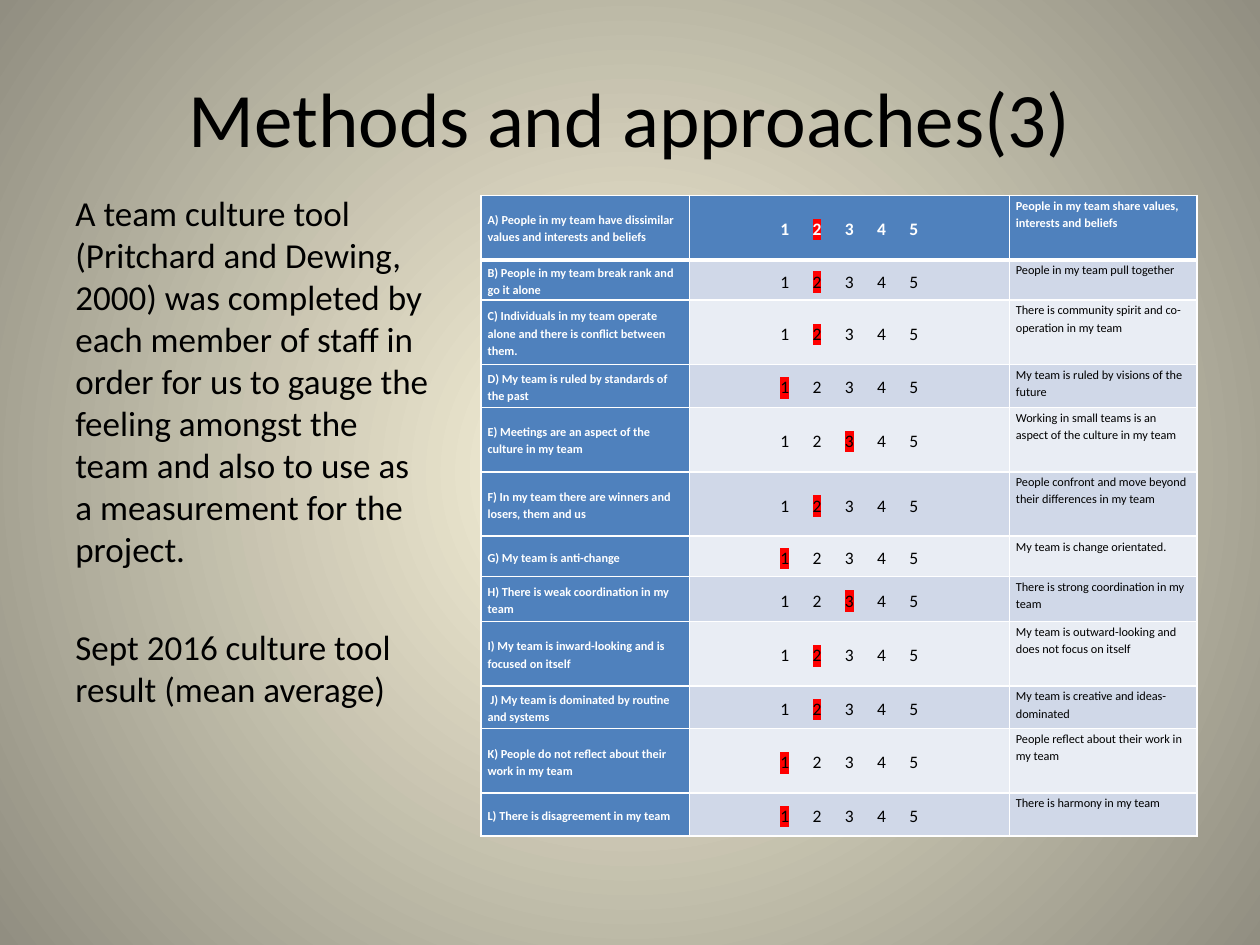
from lxml.etree import SubElement
from pptx import Presentation
from pptx.dml.color import RGBColor
from pptx.enum.text import MSO_ANCHOR as Anchor, PP_ALIGN as Align
from pptx.oxml import parse_xml
from pptx.oxml.ns import nsdecls, qn
from pptx.util import Cm, Pt

FONT = "Calibri"
BLACK = RGBColor(0x00, 0x00, 0x00)
WHITE = RGBColor(0xFF, 0xFF, 0xFF)
RED = RGBColor(0xFF, 0x00, 0x00)
BLUE = RGBColor(0x4F, 0x81, 0xBD)
BAND_DARK = RGBColor(0xD0, 0xD8, 0xE8)
BAND_LIGHT = RGBColor(0xE9, 0xED, 0xF4)
GLOW_CENTRE = RGBColor(0xFC, 0xF7, 0xDD)
GLOW_EDGE = RGBColor(0x91, 0x8E, 0x81)

TITLE = "Methods and approaches(3)"
BODY = [
    "A team culture tool (Pritchard and Dewing, 2000) was completed by each member of staff "
    "in order for us to gauge the feeling amongst the team and also to use as a measurement "
    "for the project.",
    "Sept 2016 culture tool result (mean average)",
]

COLUMN_WIDTHS = [4.2, 6.45, 3.78]
SCORE_INDENT = Cm(1.83)
SCORE_STEP = Cm(0.65)
# negative statement, mean score, positive statement, row height in cm
STATEMENTS = [
    ("A) People in my team have dissimilar values and interests and beliefs", 2,
     "People in my team share values, interests and beliefs", 1.3),
    ("B) People in my team break rank and go it alone", 2,
     "People in my team pull together", 0.81),
    ("C) Individuals in my team operate alone and there is conflict between them.", 2,
     "There is community spirit and co-operation in my team", 1.3),
    ("D) My team is ruled by standards of the past", 1,
     "My team is ruled by visions of the future", 0.86),
    ("E) Meetings are an aspect of the culture in my team", 3,
     "Working in small teams is an aspect of the culture in my team", 1.3),
    ("F) In my team there are winners and losers, them and us", 2,
     "People confront and move beyond their differences in my team", 1.3),
    ("G) My team is anti-change", 1,
     "My team is change orientated.", 0.81),
    ("H) There is weak coordination in my team", 3,
     "There is strong coordination in my team", 0.91),
    ("I) My team is inward-looking and is focused on itself", 2,
     "My team is outward-looking and does not focus on itself", 1.3),
    (" J) My team is dominated by routine and systems", 2,
     "My team is creative and ideas-dominated", 0.86),
    ("K) People do not reflect about their work in my team", 1,
     "People reflect about their work in my team", 1.3),
    ("L) There is disagreement in my team", 1,
     "There is harmony in my team", 0.86),
]


def paint_background(page):
    """Fill the page with a gradient that spreads from its centre."""
    fill = page.background.fill
    fill.gradient()
    for stop, color, position in zip(fill.gradient_stops, (GLOW_CENTRE, GLOW_EDGE), (0, 1)):
        stop.color.rgb = color
        stop.position = position
    linear = next(page.element.iter(qn("a:lin")))
    linear.getparent().replace(linear, parse_xml(
        f'<a:path {nsdecls("a")} path="circle">'
        '<a:fillToRect l="50000" t="50000" r="50000" b="50000"/></a:path>'))


def style_span(span, size, color=BLACK, bold=False):
    font = span.font
    font.name, font.size, font.bold = FONT, Pt(size), bold
    font.color.rgb = color


def highlight(span, color):
    mark = parse_xml(f'<a:highlight {nsdecls("a")}><a:srgbClr val="{color}"/></a:highlight>')
    span.font._element.find(qn("a:solidFill")).addnext(mark)


def add_text(page, paragraphs, left, top, width, height, size,
             align=Align.LEFT, anchor=Anchor.TOP, gap=0):
    frame = page.shapes.add_textbox(Cm(left), Cm(top), Cm(width), Cm(height)).text_frame
    frame.word_wrap = True
    frame.vertical_anchor = anchor
    frame.text = "\n".join(paragraphs)
    for index, para in enumerate(frame.paragraphs):
        para.alignment = align
        para.space_before = Pt(gap if index else 0)
        style_span(para.runs[0], size)


def set_borders(cell, top, bottom):
    """Draw white borders of 1 pt at the sides and of the given widths above and below."""
    properties = cell._tc.get_or_add_tcPr()
    for index, (side, width) in enumerate(zip("LRTB", (1, 1, top, bottom))):
        properties.insert(index, parse_xml(
            f'<a:ln{side} {nsdecls("a")} w="{Pt(width)}">'
            f'<a:solidFill><a:srgbClr val="{WHITE}"/></a:solidFill></a:ln{side}>'))


def prepare_cell(cell, fill, anchor):
    cell.fill.solid()
    cell.fill.fore_color.rgb = fill
    cell.vertical_anchor = anchor
    cell.margin_left = cell.margin_right = Cm(0.13)
    cell.margin_top, cell.margin_bottom = Cm(0.02), 0
    para = cell.text_frame.paragraphs[0]
    para.line_spacing = 1.15
    return para


def fill_statement(cell, text, fill, color, bold, anchor):
    para = prepare_cell(cell, fill, anchor)
    para.text = text
    style_span(para.runs[0], 7, color, bold)


def fill_scores(cell, score, fill, color, bold):
    """Write the scale from 1 to 5 on tab stops and mark the score."""
    para = prepare_cell(cell, fill, Anchor.MIDDLE)
    cell.margin_left = SCORE_INDENT
    stops = SubElement(para._p.get_or_add_pPr(), qn("a:tabLst"))
    for step in range(1, 5):
        SubElement(stops, qn("a:tab"), pos=str(SCORE_STEP * step), algn="l")
    before = "".join(f"{number}\t" for number in range(1, score))
    after = "".join(f"\t{number}" for number in range(score + 1, 6))
    for text in filter(None, (before, str(score), after)):
        span = para.add_run()
        span.text = text
        style_span(span, 10, color, bold)
        if text == str(score):
            highlight(span, RED)


def add_culture_table(page):
    table = page.shapes.add_table(len(STATEMENTS), len(COLUMN_WIDTHS), Cm(9.7), Cm(3.94),
                                  Cm(sum(COLUMN_WIDTHS)), Cm(12.97)).table
    for column, width in zip(table.columns, COLUMN_WIDTHS):
        column.width = Cm(width)
    for index, (negative, score, positive, height) in enumerate(STATEMENTS):
        is_header = index == 0
        row = table.rows[index]
        row.height = Cm(height)
        fill = BLUE if is_header else (BAND_LIGHT, BAND_DARK)[index % 2]
        color = WHITE if is_header else BLACK
        left, middle, right = row.cells
        fill_statement(left, negative, BLUE, WHITE, True, Anchor.MIDDLE)
        fill_scores(middle, score, fill, color, is_header)
        fill_statement(right, positive, fill, color, is_header, Anchor.TOP)
        for cell in row.cells:
            set_borders(cell, top=3 if index == 1 else 1, bottom=3 if is_header else 1)


def main():
    deck = Presentation()
    deck.slide_width, deck.slide_height = Cm(25.4), Cm(19.05)
    page = deck.slides.add_slide(deck.slide_layouts[6])
    paint_background(page)
    add_text(page, [TITLE], 1.27, 0.76, 22.86, 3.18, 44, Align.CENTER, Anchor.MIDDLE)
    add_text(page, BODY, 1.27, 3.73, 7.62, 12.78, 20, gap=32)
    add_culture_table(page)
    deck.save("out.pptx")


if __name__ == "__main__":
    main()
